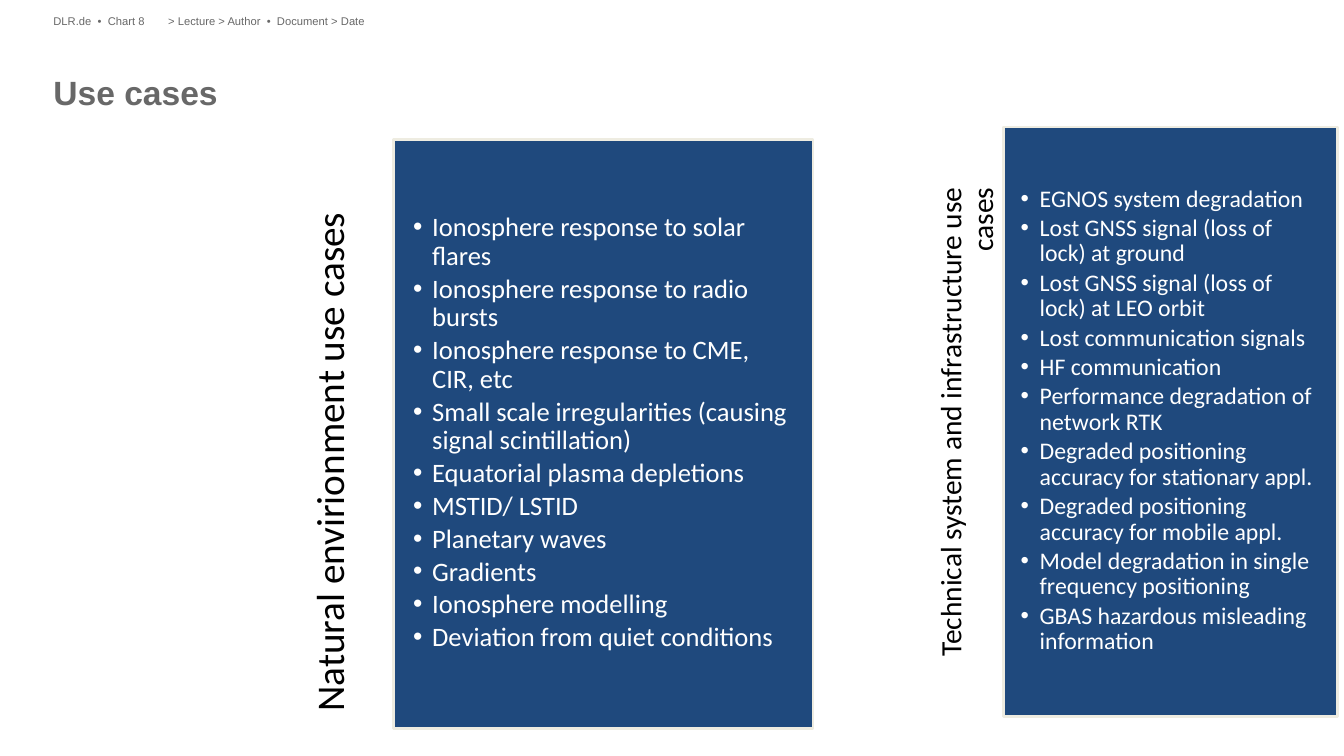
from dataclasses import dataclass

from lxml import etree
from pptx import Presentation
from pptx import util as u
from pptx.dml.color import RGBColor
from pptx.enum import shapes, text
from pptx.oxml.ns import qn

PX = 9144  # EMU per px, 100 px to the inch
SLIDE_WIDTH, SLIDE_HEIGHT = 1334, 750
PANEL_HEIGHT = 585
BULLET_INDENT = 19
LINE_SPACING = 0.9

WHITE = RGBColor(0xFF, 0xFF, 0xFF)
BLACK = RGBColor(0x00, 0x00, 0x00)
GREY = RGBColor(0x68, 0x68, 0x68)
NAVY = RGBColor(0x1F, 0x49, 0x7D)
CREAM = RGBColor(0xEE, 0xEC, 0xE1)


@dataclass(frozen=True)
class Label:
    words: str
    left: int
    top: int
    width: int
    height: int
    size: int
    bold: bool = False


@dataclass(frozen=True)
class UseCases:
    heading: str
    heading_size: int
    heading_width: int
    heading_top: int  # top of the heading once it is turned upright
    left: int
    top: int
    width: int
    inset: int
    top_inset: int
    size: int
    items: tuple[str, ...]


LABELS = (
    Label("Use cases", 53, 71, 1227, 81, 24, bold=True),
    Label("> Lecture > Author  •  Document > Date", 167, 14, 1113, 16, 8),
    Label("DLR.de  •  Chart 8", 53, 14, 114, 16, 8),
)

PANELS = (
    UseCases(
        "Technical system and infrastructure use cases", 21, 67, 127,
        996, 126, 332, 17, 59, 17,
        (
            "EGNOS system degradation",
            "Lost GNSS signal (loss of lock) at ground",
            "Lost GNSS signal (loss of lock) at LEO orbit",
            "Lost communication signals",
            "HF communication",
            "Performance degradation of network RTK",
            "Degraded positioning accuracy for stationary appl.",
            "Degraded positioning accuracy for mobile appl.",
            "Model degradation in single frequency positioning",
            "GBAS hazardous misleading information",
        ),
    ),
    UseCases(
        "Natural envirionment use cases", 28, 83, 137,
        391, 138, 416, 19, 74, 19,
        (
            "Ionosphere response to solar flares",
            "Ionosphere response to radio bursts",
            "Ionosphere response to CME, CIR, etc",
            "Small scale irregularities (causing signal scintillation)",
            "Equatorial plasma depletions",
            "MSTID/ LSTID",
            "Planetary waves",
            "Gradients",
            "Ionosphere modelling",
            "Deviation from quiet conditions",
        ),
    ),
)


def px(*lengths: int) -> list[u.Emu]:
    return [u.Emu(round(length * PX)) for length in lengths]


def prepare_frame(frame, left: int = 0, top: int = 0, right: int = 0, bottom: int = 0) -> None:
    frame.word_wrap = True
    frame.vertical_anchor = text.MSO_ANCHOR.TOP
    (frame.margin_left, frame.margin_top,
     frame.margin_right, frame.margin_bottom) = px(left, top, right, bottom)


def set_font(paragraph, name: str, size: int, colour: RGBColor, bold: bool = False) -> None:
    font = paragraph.font
    font.name, font.size, font.bold = name, u.Pt(size), bold
    font.color.rgb = colour


def add_bullet(paragraph) -> None:
    properties = paragraph._p.get_or_add_pPr()
    indent = BULLET_INDENT * PX
    properties.set("marL", str(indent))
    properties.set("indent", str(-indent))
    etree.SubElement(properties, qn("a:buFont")).set("typeface", "Arial")
    etree.SubElement(properties, qn("a:buChar")).set("char", "•")


def add_label(slide, label: Label) -> None:
    box = slide.shapes.add_textbox(*px(label.left, label.top, label.width, label.height))
    prepare_frame(box.text_frame)
    paragraph = box.text_frame.paragraphs[0]
    paragraph.text = label.words
    set_font(paragraph, "Arial", label.size, GREY, label.bold)


def add_heading(slide, panel: UseCases) -> None:
    # The box turns about its centre and then touches the panel's left edge
    centre_x = panel.left - panel.heading_width / 2
    centre_y = panel.heading_top + PANEL_HEIGHT / 2
    box = slide.shapes.add_textbox(*px(
        centre_x - PANEL_HEIGHT / 2, centre_y - panel.heading_width / 2,
        PANEL_HEIGHT, panel.heading_width))
    box.rotation = 270
    prepare_frame(box.text_frame, right=panel.top_inset)
    paragraph = box.text_frame.paragraphs[0]
    paragraph.text = panel.heading
    paragraph.alignment = text.PP_ALIGN.RIGHT
    paragraph.line_spacing = LINE_SPACING
    set_font(paragraph, "Calibri", panel.heading_size, BLACK)


def add_panel(slide, panel: UseCases) -> None:
    shape = slide.shapes.add_shape(
        shapes.MSO_SHAPE.RECTANGLE, *px(panel.left, panel.top, panel.width, PANEL_HEIGHT))
    shape.shadow.inherit = False
    shape.fill.solid()
    shape.fill.fore_color.rgb = NAVY
    shape.line.color.rgb = CREAM
    shape.line.width = u.Pt(2)

    frame = shape.text_frame
    prepare_frame(frame, panel.inset, panel.top_inset, panel.inset, panel.inset)
    for index, item in enumerate(panel.items):
        paragraph = frame.add_paragraph() if index else frame.paragraphs[0]
        paragraph.text = item
        add_bullet(paragraph)
        paragraph.alignment = text.PP_ALIGN.LEFT
        paragraph.line_spacing = LINE_SPACING
        paragraph.space_after = u.Pt(round(panel.size * 0.15, 1))
        set_font(paragraph, "Calibri", panel.size, WHITE)


def main() -> None:
    presentation = Presentation()
    presentation.slide_width, presentation.slide_height = px(SLIDE_WIDTH, SLIDE_HEIGHT)
    slide = presentation.slides.add_slide(presentation.slide_layouts[6])

    # Title and header line
    for label in LABELS:
        add_label(slide, label)

    # Use case lists with upright headings
    for panel in PANELS:
        add_heading(slide, panel)
        add_panel(slide, panel)

    presentation.save("out.pptx")


if __name__ == "__main__":
    main()
